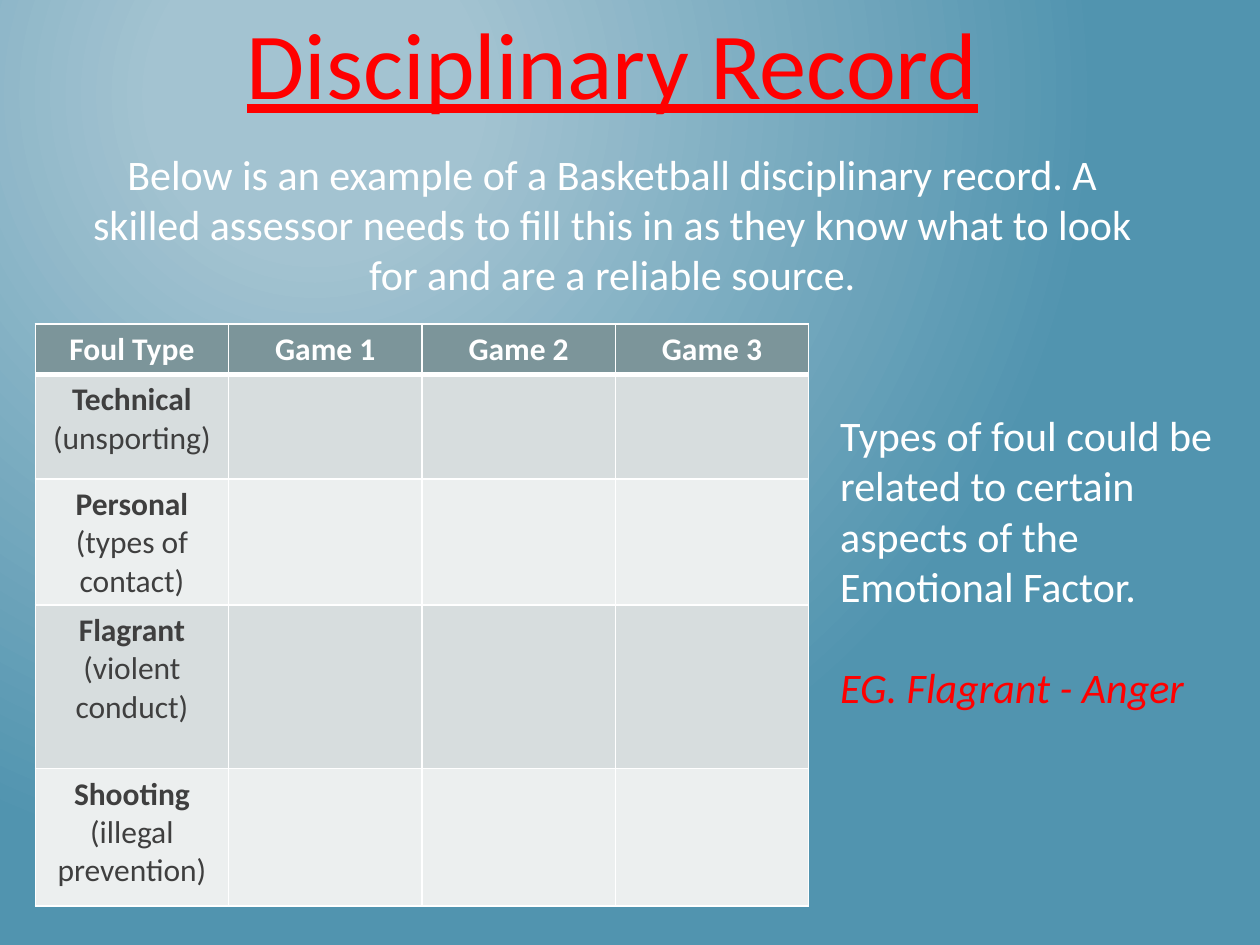
from pptx import Presentation
from pptx.dml.color import RGBColor as RGB
from pptx.enum.text import MSO_AUTO_SIZE as Auto, PP_ALIGN as Align
from pptx.oxml import parse_xml
from pptx.oxml.ns import nsdecls, qn
from pptx.util import Inches, Pt

TITLE = "Disciplinary Record"
INTRO = ("Below is an example of a Basketball disciplinary record. A skilled assessor "
         "needs to fill this in as they know what to look for and are a reliable source.")
ASPECT = "Types of foul could be related to certain aspects of the Emotional Factor."
SAMPLE = "EG. Flagrant - Anger"
HEADS = ["Foul Type", "Game 1", "Game 2", "Game 3"]
FOULS = [
    ("Technical ", "(unsporting)"),
    ("Personal ", "(types of contact)"),
    ("Flagrant ", "(violent conduct)"),
    ("Shooting ", "(illegal prevention)"),
]
HIGHS = [0.4, 0.83, 1.0, 1.3, 1.09]
WIDE = 1.535

THEME = {
    "font": "Calibri", "title": 54, "body": 24, "cell": 18,
    "white": "FFFFFF", "red": "FF0000", "dark": "3F3F3F",
    "head": "7C959A", "bands": ("D7DDDE", "ECEFEF"),
    "glow": (("A3C3D1", 0.2), ("5194AF", 1.0)),
}


def add_text(para, text, size="body", color="white", align=Align.LEFT, gap=0, **marks):
    para.alignment = align
    para.space_before = Pt(gap)
    run = para.add_run()
    run.text = text
    font = run.font
    font.name = THEME["font"]
    font.size = Pt(THEME[size])
    font.color.rgb = RGB.from_string(THEME[color])
    for name, value in marks.items():
        setattr(font, name, value)


def add_box(slide, *place):
    frame = slide.shapes.add_textbox(*map(Inches, place)).text_frame
    frame.word_wrap = True
    frame.auto_size = Auto.SHAPE_TO_FIT_TEXT
    return frame


def paint_back(slide):
    fill = slide.background.fill
    fill.gradient()
    for stop, (color, spot) in zip(fill.gradient_stops, THEME["glow"]):
        stop.color.rgb = RGB.from_string(color)
        stop.position = spot
    line = next(slide.element.iter(qn("a:lin")))
    glow = parse_xml(
        f'<a:path {nsdecls("a")} path="circle">'
        '<a:fillToRect l="50000" t="20000" r="100000" b="100000"/></a:path>')
    line.getparent().replace(line, glow)


def style_cell(cell, color, **edges):
    cell.fill.solid()
    cell.fill.fore_color.rgb = RGB.from_string(color)
    props = cell._tc.get_or_add_tcPr()
    for spot, side in enumerate("LRTB"):
        width = Pt(edges.get(side, 1))
        props.insert(spot, parse_xml(
            f'<a:ln{side} {nsdecls("a")} w="{width}"><a:solidFill>'
            f'<a:srgbClr val="{THEME["white"]}"/></a:solidFill></a:ln{side}>'))


def add_fouls(slide):
    count = len(HEADS)
    place = map(Inches, (0.28, 2.57, WIDE * count, sum(HIGHS)))
    table = slide.shapes.add_table(len(HIGHS), count, *place).table
    for col in table.columns:
        col.width = Inches(WIDE)
    for row, high in zip(table.rows, HIGHS):
        row.height = Inches(high)
    for cell, head in zip(table.rows[0].cells, HEADS):
        style_cell(cell, THEME["head"], B=3)
        add_text(cell.text_frame.paragraphs[0], head, "cell", align=Align.CENTER, bold=True)
    for num, (kind, note) in enumerate(FOULS):
        cells = list(table.rows[num + 1].cells)
        for cell in cells:
            style_cell(cell, THEME["bands"][num % 2], T=1 if num else 3)
        para = cells[0].text_frame.paragraphs[0]
        for text, bold in ((kind, True), (note, False)):
            add_text(para, text, "cell", "dark", Align.CENTER, bold=bold)


def main():
    deck = Presentation()
    deck.slide_width, deck.slide_height = Inches(10), Inches(7.5)
    slide = deck.slides.add_slide(deck.slide_layouts[6])
    paint_back(slide)

    top = add_box(slide, 0.61, -0.01, 8.5, 2.46)
    add_text(top.paragraphs[0], TITLE, "title", "red", Align.CENTER, underline=True)
    add_text(top.add_paragraph(), INTRO, align=Align.CENTER, gap=17)

    add_fouls(slide)

    side = add_box(slide, 6.57, 3.2, 3.15, 2.52)
    add_text(side.paragraphs[0], ASPECT)
    add_text(side.add_paragraph(), SAMPLE, color="red", gap=29, italic=True)
    deck.save("out.pptx")


if __name__ == "__main__":
    main()
